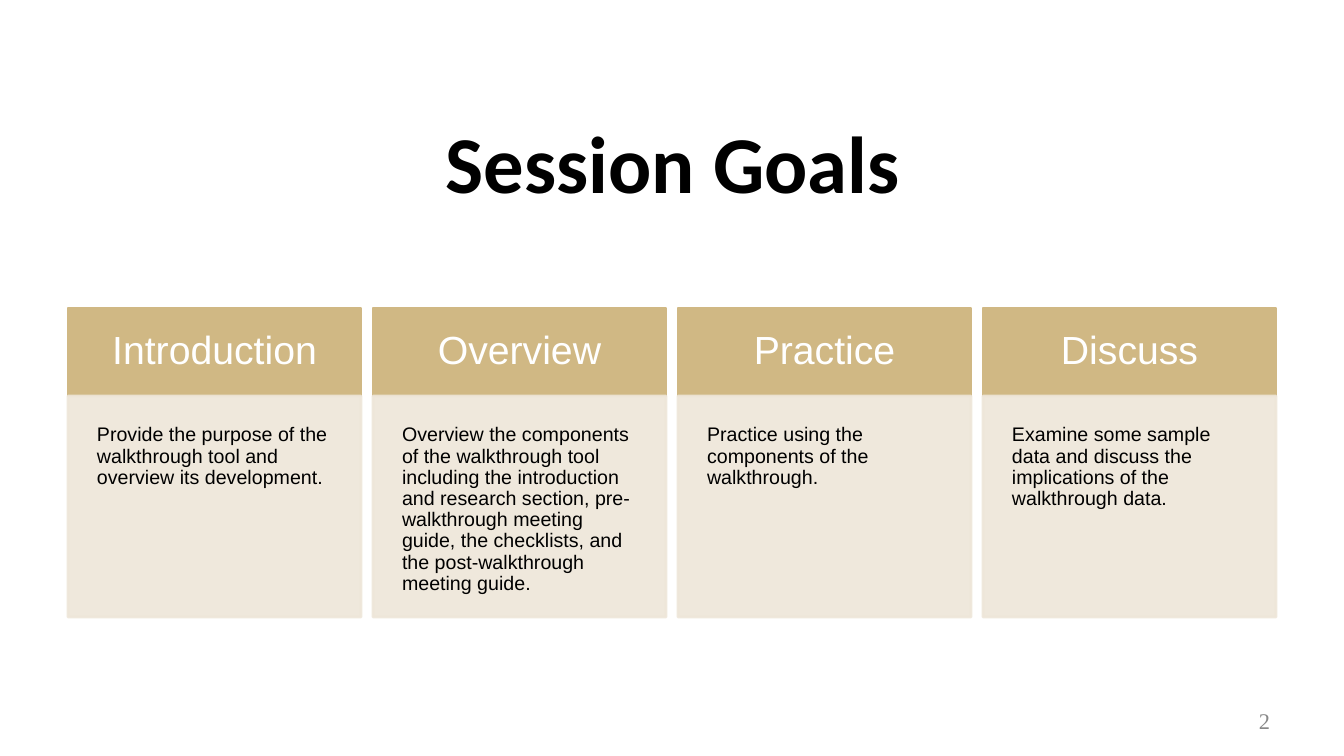
from lxml.etree import SubElement
from pptx import Presentation
from pptx.dml.color import RGBColor
from pptx.enum.shapes import MSO_SHAPE as Shape
from pptx.enum.text import MSO_ANCHOR as Anchor, MSO_AUTO_SIZE as AutoSize, PP_ALIGN as Align
from pptx.oxml.ns import qn
from pptx.util import Pt

TITLE = "Session Goals"
PAGE_NUMBER = "2"
GOALS = [
    ("Introduction", "Provide the purpose of the walkthrough tool and overview its development."),
    ("Overview", "Overview the components of the walkthrough tool including the introduction "
                 "and research section, pre-walkthrough meeting guide, the checklists, and "
                 "the post-walkthrough meeting guide."),
    ("Practice", "Practice using the components of the walkthrough."),
    ("Discuss", "Examine some sample data and discuss the implications of the walkthrough data."),
]
COLORS = {"gold": "D0B884", "cream": "EEE6D9", "white": "FFFFFF", "black": "000000", "gray": "888888"}

SCALE = 914400 / 100.8
TITLE_BOX = (68, 128, 1210, 107)
NUMBER_BOX = (964, 701, 313, 40)
LEFT, RIGHT, CARD_WIDTH = 68, 1276, 293
HEADER_TOP, HEADER_HEIGHT, BODY_HEIGHT = 308, 88, 221
PITCH = (RIGHT - LEFT - CARD_WIDTH) / (len(GOALS) - 1)


def px(length):
    return round(length * SCALE)


def color(name):
    return RGBColor.from_string(COLORS[name])


def write(shape, text, font, size, ink, align, anchor, insets, bold=False, spacing=None):
    frame = shape.text_frame
    frame.word_wrap = True
    frame.auto_size = AutoSize.NONE
    frame.vertical_anchor = anchor
    frame.margin_left, frame.margin_top, frame.margin_right, frame.margin_bottom = map(px, insets)
    paragraph = frame.paragraphs[0]
    paragraph.alignment = align
    if spacing:
        paragraph.line_spacing = spacing
    run = paragraph.add_run()
    run.text = text
    run.font.name = font
    run.font.size = Pt(size)
    run.font.bold = bold
    run.font.color.rgb = color(ink)


def add_panel(slide, box, fill, opacity=100):
    panel = slide.shapes.add_shape(Shape.RECTANGLE, *map(px, box))
    panel.shadow.inherit = False
    panel.fill.solid()
    panel.fill.fore_color.rgb = color(fill)
    panel.line.color.rgb = color(fill)
    panel.line.width = Pt(2)
    if opacity < 100:
        for tint in panel.element.spPr.iter(qn("a:srgbClr")):
            SubElement(tint, qn("a:alpha"), val=str(opacity * 1000))
    return panel


def main():
    presentation = Presentation()
    presentation.slide_width, presentation.slide_height = px(1344), px(756)
    slide = presentation.slides.add_slide(presentation.slide_layouts[5])

    title = slide.shapes.title
    title.left, title.top, title.width, title.height = map(px, TITLE_BOX)
    write(title, TITLE, "Calibri", 57.6, "black", Align.CENTER, Anchor.MIDDLE, (7, 4, 7, 44), bold=True)

    number = slide.shapes.add_textbox(*map(px, NUMBER_BOX))
    write(number, PAGE_NUMBER, "Times New Roman", 16, "gray", Align.RIGHT, Anchor.MIDDLE, (7, 4, 7, 4))

    for index, (heading, detail) in enumerate(GOALS):
        left = LEFT + index * PITCH
        header = add_panel(slide, (left, HEADER_TOP, CARD_WIDTH, HEADER_HEIGHT), "gold")
        write(header, heading, "Arial", 28, "white", Align.CENTER, Anchor.MIDDLE, [23] * 4, spacing=0.9)
        body_top = HEADER_TOP + HEADER_HEIGHT
        body = add_panel(slide, (left, body_top, CARD_WIDTH, BODY_HEIGHT), "cream", opacity=90)
        write(body, detail, "Arial", 14, "black", Align.LEFT, Anchor.TOP, [29] * 4, spacing=0.9)

    presentation.save("out.pptx")


if __name__ == "__main__":
    main()
